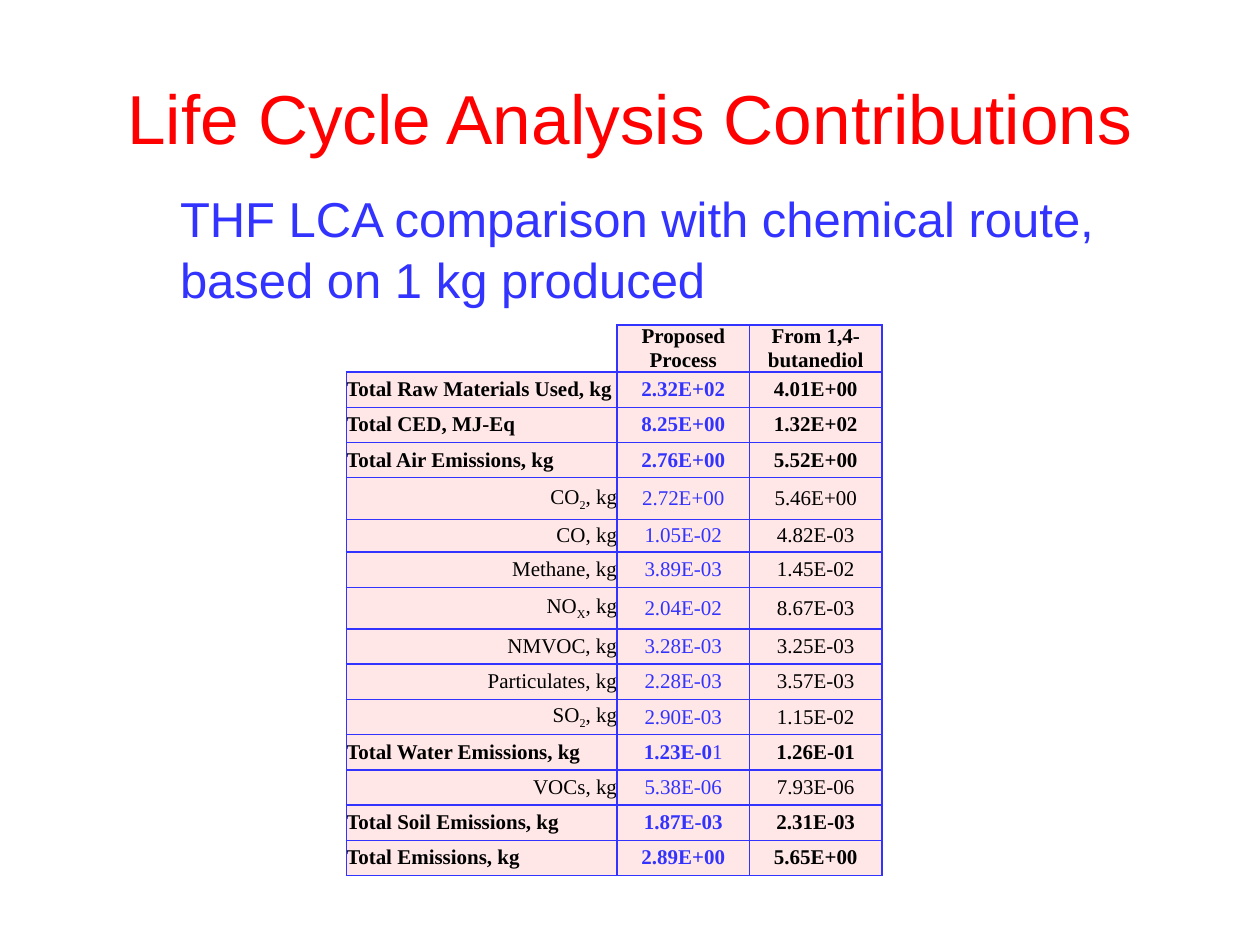
from lxml import etree
from pptx import Presentation
from pptx.dml.color import RGBColor
from pptx.enum.text import MSO_ANCHOR, MSO_AUTO_SIZE, PP_ALIGN
from pptx.oxml.ns import qn
from pptx.util import Cm, Pt

LEFT, CENTER, RIGHT = PP_ALIGN.LEFT, PP_ALIGN.CENTER, PP_ALIGN.RIGHT
MIDDLE, TOP = MSO_ANCHOR.MIDDLE, MSO_ANCHOR.TOP
NO_AUTOFIT = MSO_AUTO_SIZE.NONE
TITLE_ONLY = 5

RED = RGBColor(0xFF, 0x00, 0x00)
BLUE = RGBColor(0x33, 0x33, 0xFF)
BLACK = RGBColor(0x00, 0x00, 0x00)
WHITE = RGBColor(0xFF, 0xFF, 0xFF)
PINK = RGBColor(0xFF, 0xE7, 0xE7)

HEADERS = ["Proposed Process", "From 1,4-butanediol"]
ROW, SUBSCRIPT_ROW = 0.71, 0.84
EMISSIONS = [
    (["Total Raw Materials Used, kg"], "2.32E+02", "4.01E+00", ROW),
    (["Total CED, MJ-Eq"], "8.25E+00", "1.32E+02", ROW),
    (["Total Air Emissions, kg"], "2.76E+00", "5.52E+00", ROW),
    (["CO", "2", ", kg"], "2.72E+00", "5.46E+00", SUBSCRIPT_ROW),
    (["CO, kg"], "1.05E-02", "4.82E-03", 0.66),
    (["Methane, kg"], "3.89E-03", "1.45E-02", ROW),
    (["NO", "X", ", kg"], "2.04E-02", "8.67E-03", SUBSCRIPT_ROW),
    (["NMVOC, kg"], "3.28E-03", "3.25E-03", ROW),
    (["Particulates, kg"], "2.28E-03", "3.57E-03", ROW),
    (["SO", "2", ", kg"], "2.90E-03", "1.15E-02", ROW),
    (["Total Water Emissions, kg"], "1.23E-01", "1.26E-01", ROW),
    (["VOCs, kg"], "5.38E-06", "7.93E-06", ROW),
    (["Total Soil Emissions, kg"], "1.87E-03", "2.31E-03", ROW),
    (["Total Emissions, kg"], "2.89E+00", "5.65E+00", ROW),
]
PARTLY_BOLD = "1.23E-01"


class SlideBuilder:
    heading_font = "Arial"
    table_font = "Times New Roman"
    table_size = 12

    def __init__(self, presentation):
        self.slide = presentation.slides.add_slide(presentation.slide_layouts[TITLE_ONLY])

    def add_run(self, paragraph, text, font, size, color, bold=False, subscript=False):
        run = paragraph.add_run()
        run.text = text
        run.font.name = font
        run.font.size = Pt(size)
        run.font.bold = bold
        run.font.color.rgb = color
        if subscript:
            run._r.get_or_add_rPr().set("baseline", "-25000")

    def title(self, text, left, top, width, height):
        shape = self.slide.shapes.title
        shape.left, shape.top, shape.width, shape.height = Cm(left), Cm(top), Cm(width), Cm(height)
        frame = shape.text_frame
        frame.auto_size = NO_AUTOFIT
        frame.vertical_anchor = MIDDLE
        paragraph = frame.paragraphs[0]
        paragraph.alignment = CENTER
        self.add_run(paragraph, text, self.heading_font, 39.6, RED)

    def text(self, text, left, top, width, height):
        shape = self.slide.shapes.add_textbox(Cm(left), Cm(top), Cm(width), Cm(height))
        frame = shape.text_frame
        frame.word_wrap = True
        frame.vertical_anchor = TOP
        paragraph = frame.paragraphs[0]
        paragraph.alignment = LEFT
        paragraph.line_spacing = 1.05
        self.add_run(paragraph, text, self.heading_font, 28, BLUE)

    def table(self, left, top, widths, heights):
        shape = self.slide.shapes.add_table(
            len(heights), len(widths), Cm(left), Cm(top), Cm(sum(widths)), Cm(sum(heights)))
        table = shape.table
        table.first_row = False
        table.horz_banding = False
        for column, width in zip(table.columns, widths):
            column.width = Cm(width)
        for row, height in zip(table.rows, heights):
            row.height = Cm(height)
        return table

    def style_cell(self, cell, fill, sides="LRTB"):
        properties = cell._tc.get_or_add_tcPr()
        for side in sides:
            line = etree.SubElement(properties, qn(f"a:ln{side}"), w=str(Pt(1)))
            solid = etree.SubElement(line, qn("a:solidFill"))
            etree.SubElement(solid, qn("a:srgbClr"), val=str(BLUE))
        cell.fill.solid()
        cell.fill.fore_color.rgb = fill
        cell.margin_left = cell.margin_right = cell.margin_top = cell.margin_bottom = 0
        cell.vertical_anchor = MIDDLE

    def cell(self, cell, runs, alignment, color):
        self.style_cell(cell, PINK)
        paragraph = cell.text_frame.paragraphs[0]
        paragraph.alignment = alignment
        for text, bold, subscript in runs:
            self.add_run(paragraph, text, self.table_font, self.table_size, color, bold, subscript)


def main():
    presentation = Presentation()
    presentation.slide_width, presentation.slide_height = Cm(25.4), Cm(19.05)
    builder = SlideBuilder(presentation)
    builder.title("Life Cycle Analysis Contributions", 1.27, 0.76, 22.86, 3.18)

    heights = [0.95] + [emission[-1] for emission in EMISSIONS]
    table = builder.table(6.98, 6.55, [5.46, 2.67, 2.67], heights)
    builder.style_cell(table.cell(0, 0), WHITE, "RB")
    for column, header in enumerate(HEADERS, 1):
        builder.cell(table.cell(0, column), [(header, True, False)], CENTER, BLACK)

    for row, (label, proposed, chemical, _) in enumerate(EMISSIONS, 1):
        total = label[0].startswith("Total")
        label_runs = [(part, total, index == 1) for index, part in enumerate(label)]
        builder.cell(table.cell(row, 0), label_runs, LEFT if total else RIGHT, BLACK)
        proposed_runs = [(proposed, total, False)]
        if proposed == PARTLY_BOLD:
            proposed_runs = [(proposed[:-1], True, False), (proposed[-1], False, False)]
        builder.cell(table.cell(row, 1), proposed_runs, CENTER, BLUE)
        builder.cell(table.cell(row, 2), [(chemical, total, False)], CENTER, BLACK)

    builder.text("THF LCA comparison with chemical route, based on 1 kg produced",
                 3.38, 3.61, 21.16, 2.64)
    presentation.save("out.pptx")


if __name__ == "__main__":
    main()
